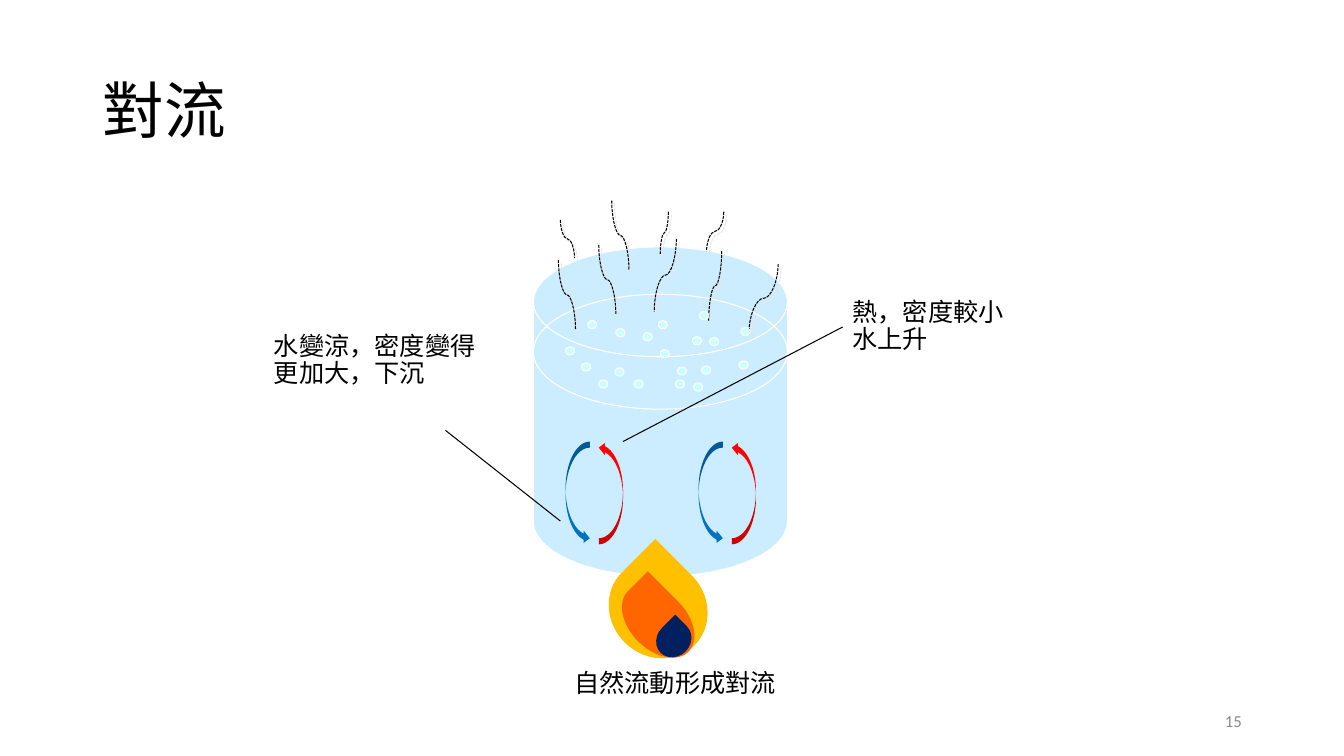
from typing import NamedTuple

from lxml.etree import SubElement
from pptx import Presentation
from pptx.dml.color import RGBColor
from pptx.enum.dml import MSO_LINE
from pptx.enum.shapes import MSO_CONNECTOR, MSO_SHAPE
from pptx.enum.text import MSO_ANCHOR, MSO_AUTO_SIZE, PP_ALIGN
from pptx.oxml.ns import qn
from pptx.shapes.autoshape import Shape
from pptx.shapes.connector import Connector
from pptx.slide import Slide
from pptx.util import Pt


class Box(NamedTuple):
    left: float
    top: float
    width: float
    height: float


class Form(NamedTuple):
    kind: MSO_SHAPE
    box: Box
    fill: str | None = None
    line: str | None = None
    turn: float = 0


class Steam(NamedTuple):
    x1: float
    y1: float
    x2: float
    y2: float


class Label(NamedTuple):
    text: str
    box: Box
    wrap: bool = True
    spread: float | None = None
    before: float = 0


POT = Box(381, 176.4, 181.4, 235.4)
SURFACE = Box(381, 210.2, 181.4, 82.1)

FLAMES = [
    (Box(436.3, 398.2, 67.7, 73.4), "FFC000"),
    (Box(450, 413.3, 40.3, 61.2), "FF6600"),
    (Box(468, 445, 26.6, 23.8), "002060"),
]

STEAM = [
    Steam(427.7, 175, 439.9, 224.6),
    Steam(483.1, 170.6, 467.3, 222.5),
    Steam(515.5, 179.3, 506.2, 229),
    Steam(398.9, 185.8, 411.1, 235.4),
    Steam(555.8, 188.6, 535, 237.6),
    Steam(437, 143.3, 449.3, 193),
    Steam(517, 151.2, 504.7, 179.3),
    Steam(477.4, 151.2, 471.6, 181.4),
    Steam(400.3, 157, 410.4, 184.3),
]

BUBBLES = [
    (403.9, 247.7), (415.4, 259.2), (427.7, 271.4), (439.9, 234.7),
    (419.8, 229), (470.2, 229), (499.7, 222.5), (529.2, 234),
    (459.4, 237.6), (527.8, 257.8), (471.6, 249.8), (483.8, 262.1),
    (506.9, 241.2), (501.1, 261.4), (452.9, 271.4), (439.2, 262.8),
    (482.4, 271.4), (495.4, 273.6), (494.6, 240.5),
]

HEAT = Label("熱，密度較小\n水上升", Box(601.9, 210.2, 123.8, 46.8), False, 0.9, 10)
COOL = Label("水變涼，密度變得更加大，下沉", Box(188.6, 234.7, 159.1, 46.8), True, 0.9, 10)
RESULT = Label("自然流動形成對流", Box(403.2, 473, 159.8, 28.8), False)
NUMBER = Label("15", Box(678.2, 500.4, 216, 28.8))


def tint(code: str) -> RGBColor:
    return RGBColor.from_string(code)


def put_text(shape: Shape, text: str, size: float, color: str = "000000",
             spread: float | None = None, before: float = 0) -> None:
    para = shape.text_frame.paragraphs[0]
    para.text = text
    para.line_spacing = spread
    para.space_before = Pt(before)
    para.font.size = Pt(size)
    para.font.name = "Calibri"
    para.font.color.rgb = tint(color)


def add_title(slide: Slide, text: str) -> None:
    title = slide.shapes.title
    title.left, title.top, title.width, title.height = map(Pt, (66, 28.8, 828, 104.4))
    title.text_frame.vertical_anchor = MSO_ANCHOR.MIDDLE
    put_text(title, text, 44, spread=0.9)
    title.text_frame.paragraphs[0].alignment = PP_ALIGN.LEFT


def add_form(slide: Slide, form: Form) -> None:
    shape = slide.shapes.add_shape(form.kind, *map(Pt, form.box))
    shape.shadow.inherit = False
    shape.rotation = form.turn
    if form.fill:
        shape.fill.solid()
        shape.fill.fore_color.rgb = tint(form.fill)
    else:
        shape.fill.background()
    if form.line:
        shape.line.color.rgb = tint(form.line)
        shape.line.width = Pt(0.75)
    else:
        shape.line.fill.background()


def add_label(slide: Slide, label: Label) -> Shape:
    box = slide.shapes.add_textbox(*map(Pt, label.box))
    box.text_frame.word_wrap = label.wrap
    box.text_frame.auto_size = MSO_AUTO_SIZE.SHAPE_TO_FIT_TEXT
    put_text(box, label.text, 18, spread=label.spread, before=label.before)
    return box


def add_number(slide: Slide, label: Label) -> None:
    box = slide.shapes.add_textbox(*map(Pt, label.box))
    box.text_frame.word_wrap = True
    box.text_frame.vertical_anchor = MSO_ANCHOR.MIDDLE
    put_text(box, label.text, 12, "898989")
    box.text_frame.paragraphs[0].alignment = PP_ALIGN.RIGHT


def add_line(slide: Slide, kind: MSO_CONNECTOR, *ends: float) -> Connector:
    line = slide.shapes.add_connector(kind, *map(Pt, ends))
    line.line.color.rgb = tint("000000")
    line.line.width = Pt(0.75)
    SubElement(line._element.spPr, qn("a:effectLst"))
    return line


def add_steam(slide: Slide, steam: Steam) -> None:
    """Draw a level curve about the wisp's centre, then turn it upright."""
    mid_x, mid_y = (steam.x1 + steam.x2) / 2, (steam.y1 + steam.y2) / 2
    side = 1 if steam.x2 < steam.x1 else -1
    reach = side * (steam.y2 - steam.y1) / 2
    drop = abs(steam.x2 - steam.x1) / 2
    line = add_line(slide, MSO_CONNECTOR.CURVE,
                    mid_x - reach, mid_y - drop, mid_x + reach, mid_y + drop)
    line.line.dash_style = MSO_LINE.SQUARE_DOT
    props = line._element.spPr
    props.get_or_add_xfrm().rot = 180 - 90 * side
    shade = SubElement(props.find(qn("a:effectLst")), qn("a:outerShdw"),
                       dist=str(Pt(2.8)), dir="2700000", algn="ctr", rotWithShape="0")
    SubElement(shade, qn("a:srgbClr"), val="E7E6E6")


def main() -> None:
    deck = Presentation()
    deck.slide_width, deck.slide_height = Pt(960), Pt(540)
    slide = deck.slides.add_slide(deck.slide_layouts[5])
    add_title(slide, "對流")

    add_form(slide, Form(MSO_SHAPE.FLOWCHART_MAGNETIC_DISK, POT, "CCECFF", "FFFFFF"))
    for left in (404, 499):
        for shift, fill, turn in ((0, "0070C0", 0), (23.7, "FF0000", 180)):
            box = Box(left + shift, 315.4, 17.3, 73.4)
            add_form(slide, Form(MSO_SHAPE.CURVED_RIGHT_ARROW, box, fill, turn=turn))
    add_form(slide, Form(MSO_SHAPE.OVAL, SURFACE, line="FFFFFF"))
    for box, fill in FLAMES:
        add_form(slide, Form(MSO_SHAPE.TEAR, box, fill, turn=315))
    for steam in STEAM:
        add_steam(slide, steam)
    for left, top in BUBBLES:
        add_form(slide, Form(MSO_SHAPE.OVAL, Box(left, top, 6.5, 5.8), "CCFFFF", "FFFFFF"))

    heat = add_label(slide, HEAT)
    add_label(slide, COOL)
    add_line(slide, MSO_CONNECTOR.STRAIGHT, 318.2, 307.4, 400.3, 372.2)
    pointer = add_line(slide, MSO_CONNECTOR.STRAIGHT, 601.9, 233.6, 445, 315.4)
    pointer.begin_connect(heat, 1)
    add_label(slide, RESULT)
    add_number(slide, NUMBER)
    deck.save("out.pptx")


if __name__ == "__main__":
    main()
